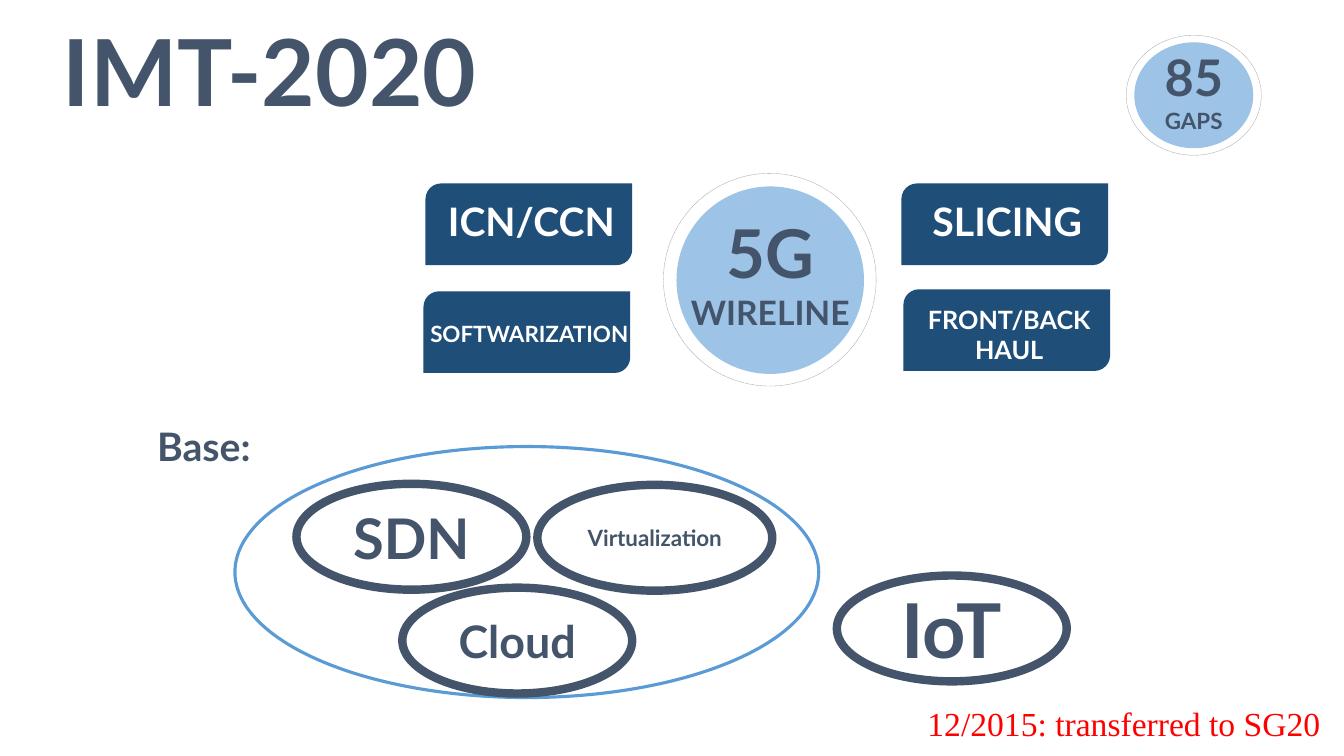
from lxml.etree import SubElement
from pptx import Presentation
from pptx.dml.color import RGBColor
from pptx.enum.dml import MSO_LINE
from pptx.enum.shapes import MSO_SHAPE
from pptx.enum.text import MSO_ANCHOR, PP_ALIGN
from pptx.oxml.ns import qn
from pptx.util import Inches, Pt

SLATE, NAVY, SKY, BLUE = "44546A", "1F4E79", "9DC3E6", "5B9BD5"
GREY, WHITE, RED = "A6A6A6", "FFFFFF", "FF0000"

TITLE = ("IMT-2020", 66, (0.21, 0.12, 4.93, 1.16))
BADGES = [
    ((6.71, 1.85, 1.86, 1.86), (6.58, 1.72, 2.11, 2.11),
     (6.39, 2, 2.5, 1.41), [("5G", 48), ("WIRELINE", 24)]),
    ((11.25, 0.42, 1.18, 1.05), (11.17, 0.35, 1.34, 1.19),
     (10.73, 0.36, 2.22, 1.11), [("85", 36), ("GAPS", 16)]),
]
TAGS = [
    ("SLICING", 28, 8.94, 1.82, 0.04, 0.67),
    ("SOFTWARIZATION", 16, 4.2, 2.89, 0.19, 0.47),
    ("ICN/CCN", 28, 4.22, 1.82, 0.04, 0.67),
    ("FRONT/BACK HAUL", 18, 8.96, 2.87, 0.05, 0.81),
]
BASE = ("Base: ", 28, (0.82, 4.09, 2.5, 0.67))
RING = (2.33, 4.43, 5.79, 2.49)
NODES = [
    ("SDN", 40, 2.94, 4.8, 2.28),
    ("Virtualization", 16, 5.33, 4.81, 2.33),
    ("Cloud", 32, 3.99, 5.83, 2.28),
    ("IoT", 54, 8.3, 5.71, 2.28),
]
NOTE = ("12/2015: transferred to SG20", 24, (9.1, 6.92, 4.14, 0.5))


def tint(text):
    return RGBColor.from_string(text)


def style(para, size, color=SLATE, face="Lato", bold=True, align=PP_ALIGN.CENTER):
    para.alignment = align
    font = para.font
    font.name, font.size, font.bold = face, Pt(size), bold
    font.color.rgb = tint(color)


def inset(frame, side, top):
    frame.margin_left = frame.margin_right = Inches(side)
    frame.margin_top = frame.margin_bottom = Inches(top)


def draw(kind, box, fill=None, line=None, width=0):
    shape = slide.shapes.add_shape(kind, *map(Inches, box))
    shape.shadow.inherit = False
    if fill:
        shape.fill.solid()
        shape.fill.fore_color.rgb = tint(fill)
    else:
        shape.fill.background()
    if line:
        shape.line.color.rgb = tint(line)
        shape.line.width = Pt(width)
    else:
        shape.line.fill.background()
    return shape


def label(box, lines, color=SLATE):
    frame = slide.shapes.add_textbox(*map(Inches, box)).text_frame
    frame.word_wrap = True
    inset(frame, 0.2, 0.1)
    para = frame.paragraphs[0]
    style(para, lines[0][1], color)
    for i, (text, size) in enumerate(lines):
        if i:
            para.add_line_break()
        run = para.add_run()
        run.text = text
        if i:
            run.font.size = Pt(size)


deck = Presentation()
deck.slide_width, deck.slide_height = Inches(13.33), Inches(7.5)
slide = deck.slides.add_slide(deck.slide_layouts[5])

text, size, box = TITLE
title = slide.shapes.title
title.left, title.top, title.width, title.height = map(Inches, box)
frame = title.text_frame
frame.text = text
frame.vertical_anchor = MSO_ANCHOR.TOP
inset(frame, 0.05, 0.02)
style(frame.paragraphs[0], size)

for disc, rim, box, lines in BADGES:
    draw(MSO_SHAPE.OVAL, disc, SKY)
    edge = draw(MSO_SHAPE.OVAL, rim, None, GREY, 0.25)
    edge.line.dash_style = MSO_LINE.SQUARE_DOT
    label(box, lines)

for text, size, x, y, drop, high in TAGS:
    tag = draw(MSO_SHAPE.ROUND_2_DIAG_RECTANGLE, (x, y, 2.05, 0.81), NAVY)
    tag.adjustments[0] = 0.19
    label((x - 0.2, y + drop, 2.5, high), [(text, size)], WHITE)

text, size, box = BASE
label(box, [(text, size)])

draw(MSO_SHAPE.OVAL, RING, None, BLUE, 2.25)
for text, size, x, y, wide in NODES:
    node = draw(MSO_SHAPE.OVAL, (x, y, wide, 1.05), WHITE, SLATE, 6)
    color = node.fill._xPr.find(qn("a:solidFill"))[0]
    SubElement(color, qn("a:alpha"), val="22000")
    frame = node.text_frame
    frame.text = text
    frame.vertical_anchor = MSO_ANCHOR.MIDDLE
    style(frame.paragraphs[0], size)

text, size, box = NOTE
frame = slide.shapes.add_textbox(*map(Inches, box)).text_frame
frame.word_wrap = False
frame.text = text
style(frame.paragraphs[0], size, RED, "Times New Roman", False, PP_ALIGN.LEFT)

deck.save("out.pptx")
